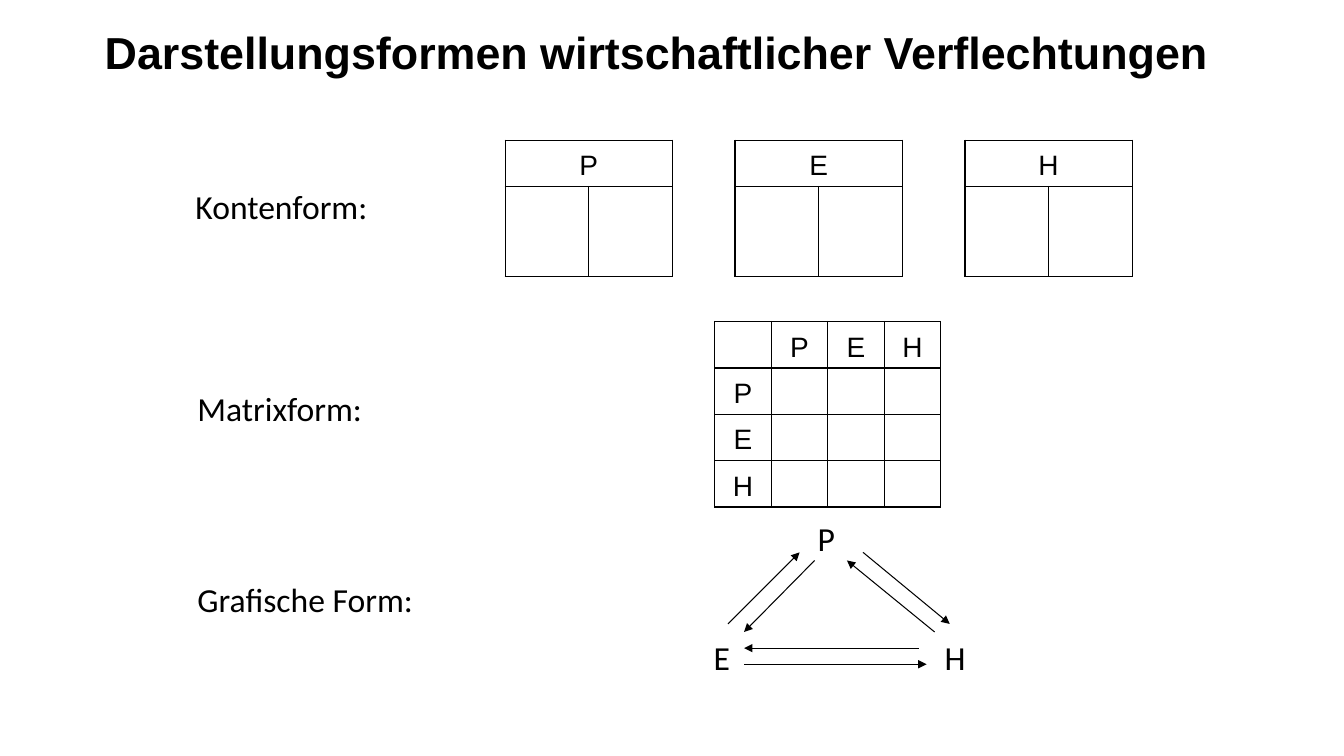
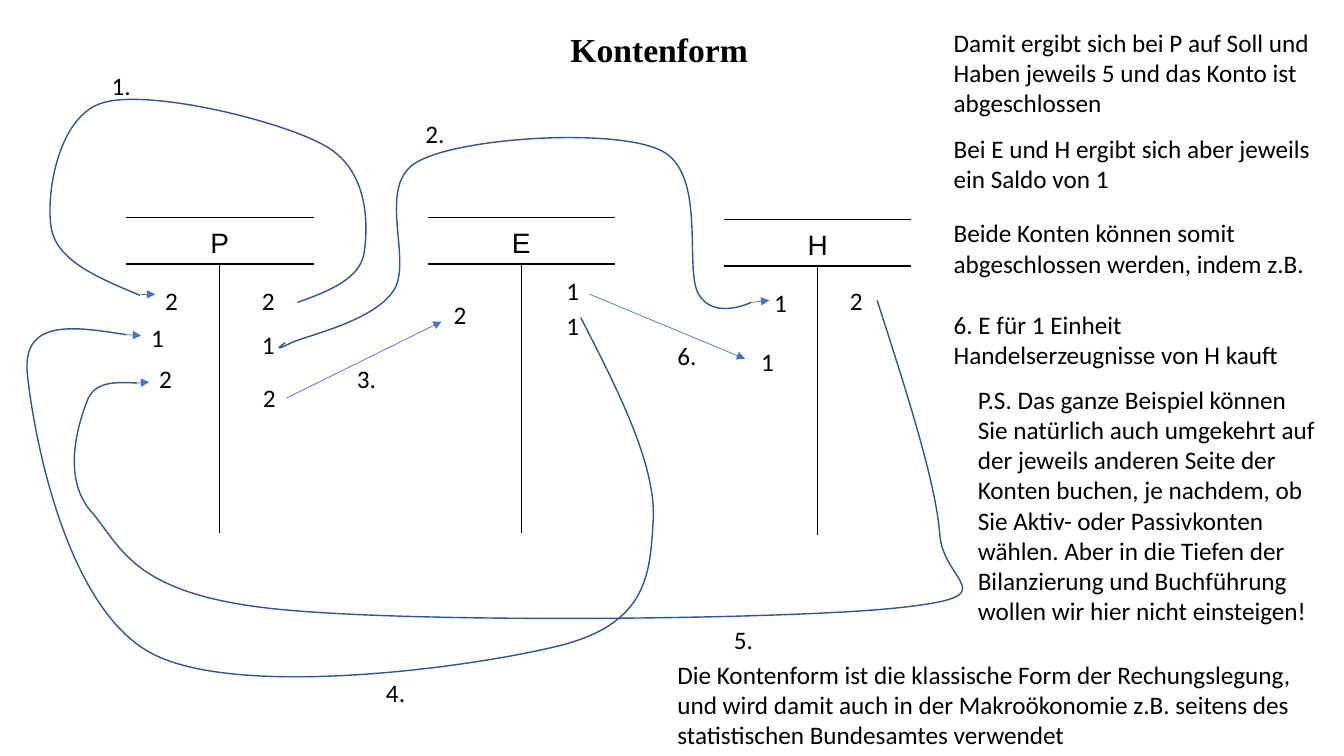
import pptx
import pptx.util
import pptx.dml.color
import pptx.enum.shapes
import pptx.enum.text
import pptx.oxml.ns
from lxml import etree

Inches, Pt = pptx.util.Inches, pptx.util.Pt
qn = pptx.oxml.ns.qn
RGB = pptx.dml.color.RGBColor.from_string
MSO_ANCHOR = pptx.enum.text.MSO_ANCHOR
COLORS = {"ink": "000000", "arrow": "4472C4", "curve": "325491"}
BODY, HEAD, SERIF = "Calibri", "Arial", "Times New Roman"

deck = pptx.Presentation()
deck.slide_width, deck.slide_height = Inches(13.33), Inches(7.5)
forms = deck.slides.add_slide(deck.slide_layouts[6])
books = deck.slides.add_slide(deck.slide_layouts[6])


def write(slide, box, lines, size, wrap=False, font=BODY, title=False):
    """Add a text box; paragraphs after the first stand one line apart."""
    frame = slide.shapes.add_textbox(*map(Inches, box)).text_frame
    frame.text = lines
    frame.word_wrap = wrap
    if not wrap:
        frame.auto_size = pptx.enum.text.MSO_AUTO_SIZE.SHAPE_TO_FIT_TEXT
    if title:
        frame.vertical_anchor = MSO_ANCHOR.MIDDLE
    for i, para in enumerate(frame.paragraphs):
        if i:
            para.space_before = Pt(22)
        for run in para.runs:
            run.font.size, run.font.name, run.font.bold = Pt(size), font, title
            run.font.color.rgb = RGB(COLORS["ink"])


def arrow(slide, ends, color, width):
    link = slide.shapes.add_connector(
        pptx.enum.shapes.MSO_CONNECTOR.STRAIGHT, *map(Inches, ends))
    link.line.color.rgb = RGB(COLORS[color])
    link.line.width = Pt(width)
    props = link._element.spPr
    etree.SubElement(props.find(qn("a:ln")), qn("a:tailEnd"), type="triangle")
    etree.SubElement(props, qn("a:effectLst"))


# Titles
write(forms, (0.94, 0.19, 11.36, 0.64),
      "Darstellungsformen wirtschaftlicher Verflechtungen", 32, True, HEAD, True)
write(books, (5.56, 0.23, 2.19, 0.51), "Kontenform", 24, True, SERIF, True)

# Tables: slide, left, top, column widths, row heights, labels by cell, boxed
tables = []
for i, name in enumerate("PEH"):
    tables.append((forms, 5.01 + 2.28 * i, 1.39, [0.83] * 2, [0.46, 0.89],
                   {(0, 0): name}, True))
for name, x, y in [("P", 1.25, 2.16), ("E", 4.24, 2.16), ("H", 7.18, 2.18)]:
    tables.append((books, x, y, [0.93] * 2, [0.46] + [0.89] * 3,
                   {(0, 0): name}, False))
labels = {}
for i, name in enumerate("PEH", 1):
    labels[0, i] = labels[i, 0] = name
tables.append((forms, 7.09, 3.19, [0.56] * 4, [0.46] * 4, labels, True))

for slide, x, y, cols, rows, labels, boxed in tables:
    table = slide.shapes.add_table(
        len(rows), len(cols), Inches(x), Inches(y),
        Inches(sum(cols)), Inches(sum(rows))).table
    table.first_row = table.horz_banding = False
    for col, width in zip(table.columns, cols):
        col.width = Inches(width)
    for row, height in zip(table.rows, rows):
        row.height = Inches(height)
    if len(cols) == 2:
        table.cell(0, 0).merge(table.cell(0, 1))
    for r in range(len(rows)):
        for c in range(len(cols)):
            cell = table.cell(r, c)
            cell.fill.background()
            cell.vertical_anchor = MSO_ANCHOR.BOTTOM
            if (r, c) in labels:
                cell.text = labels[r, c]
                para = cell.text_frame.paragraphs[0]
                para.alignment = pptx.enum.text.PP_ALIGN.CENTER
                para.line_spacing = Pt(25.6)
                font = para.runs[0].font
                font.size, font.name = Pt(20), HEAD
                font.color.rgb = RGB(COLORS["ink"])
            if boxed:
                sides = "LRTB"
            elif r == 0:
                sides = "TB"
            else:
                sides = "RL"[c] + ("T" if r == 1 else "")
            props = cell._tc.get_or_add_tcPr()
            for i, side in enumerate("LRTB"):
                edge = etree.Element(qn("a:ln" + side), w=str(Pt(1)))
                if side in sides:
                    fill = etree.SubElement(edge, qn("a:solidFill"))
                    etree.SubElement(fill, qn("a:srgbClr"), val=COLORS["ink"])
                else:
                    etree.SubElement(edge, qn("a:noFill"))
                props.insert(i, edge)

# Labels and graph of the three forms
for text, x, y, w in [
        ("Kontenform:", 1.84, 1.8, 1.92), ("Matrixform:", 1.86, 3.8, 1.85),
        ("Grafische Form:", 1.86, 5.69, 2.39), ("P", 8.01, 5.09, 0.39),
        ("E", 6.98, 6.27, 0.37), ("H", 9.27, 6.27, 0.41)]:
    write(forms, (x, y, w, 0.5), text, 24)
for ends in [
        (7.22, 6.19, 7.93, 5.48), (8.08, 5.56, 7.38, 6.27),
        (7.38, 6.59, 9.19, 6.59), (9.11, 6.43, 7.38, 6.43),
        (9.27, 6.27, 8.4, 5.56), (8.56, 5.48, 9.42, 6.19)]:
    arrow(forms, ends, "ink", 0.75)

# Entries and step numbers in the accounts
for text, x, y in [
        ("2", 2.5, 2.78), ("2", 1.54, 2.78), ("1.", 1.01, 0.65),
        ("1", 2.5, 3.22), ("1", 7.58, 2.8), ("2.", 4.12, 1.12),
        ("2", 2.51, 3.74), ("2", 4.4, 2.92), ("3.", 3.44, 3.56),
        ("1", 5.52, 2.68), ("1", 1.4, 3.15), ("4.", 3.73, 6.67),
        ("2", 8.33, 2.78), ("2", 1.48, 3.56), ("5.", 7.18, 6.14),
        ("1", 5.52, 3.03), ("1", 7.45, 3.39), ("6.", 6.62, 3.33)]:
    write(books, (x, y, 0.39 if "." in text else 0.33, 0.4), text, 18)

# Booking curves: a start, then two handles and an end for each bend
curves = [
    [(2.95, 3), (3.26, 2.89), (3.56, 2.77), (3.61, 2.52),
     (3.65, 2.26), (3.67, 1.7), (3.23, 1.45),
     (2.8, 1.2), (1.48, 0.88), (1.02, 1.02),
     (0.57, 1.15), (0.45, 1.95), (0.51, 2.27),
     (0.57, 2.59), (0.98, 2.76), (1.39, 2.93)],
    [(2.83, 3.4), (2.77, 3.44), (2.71, 3.49), (2.89, 3.4),
     (3.07, 3.32), (3.69, 3.19), (3.9, 2.89),
     (4.11, 2.59), (3.71, 1.83), (4.15, 1.6),
     (4.59, 1.36), (6.09, 1.27), (6.55, 1.49),
     (7.02, 1.71), (6.78, 2.67), (6.93, 2.92),
     (7.08, 3.18), (7.45, 3), (7.45, 3)],
    [(5.76, 3.15), (6.13, 3.87), (6.5, 4.6), (6.48, 5.14),
     (6.45, 5.68), (6.43, 6.16), (5.61, 6.39),
     (4.78, 6.61), (2.4, 6.94), (1.52, 6.49),
     (0.63, 6.04), (0.32, 4.22), (0.27, 3.69),
     (0.23, 3.16), (0.74, 3.24), (1.25, 3.32)],
    [(8.7, 2.98), (8.99, 3.88), (9.28, 4.78), (9.32, 5.29),
     (9.35, 5.8), (10.02, 5.91), (8.91, 6.03),
     (7.79, 6.15), (3.96, 6.19), (2.63, 6.03),
     (1.29, 5.87), (1.2, 5.41), (0.9, 5.07),
     (0.61, 4.73), (0.78, 4.2), (0.86, 3.99),
     (0.93, 3.78), (1.14, 3.79), (1.36, 3.8)],
]
for curve in curves:
    dots = [(Inches(x), Inches(y)) for x, y in curve]
    pen = books.shapes.build_freeform(*dots[0])
    pen.add_line_segments(dots[1:], close=False)
    shape = pen.convert_to_shape()
    shape.shadow.inherit = False
    shape.fill.background()
    shape.line.color.rgb = RGB(COLORS["curve"])
    shape.line.width = Pt(1)
    # Turn every three straight segments into one bend
    steps = list(shape._element.iter(qn("a:lnTo")))
    for i in range(0, len(steps), 3):
        bend = etree.Element(qn("a:cubicBezTo"))
        steps[i].addprevious(bend)
        for step in steps[i:i + 3]:
            bend.append(step[0])
            step.getparent().remove(step)

for ends in [
        (1.4, 2.92, 1.54, 2.92), (7.45, 3, 7.63, 2.98),
        (1.25, 3.32, 1.4, 3.33), (1.36, 3.8, 1.48, 3.79),
        (2.84, 3.95, 4.38, 3.19), (5.85, 2.92, 7.39, 3.56)]:
    arrow(books, ends, "arrow", 0.5)

# Remarks
for box, text in [
        ((9.36, 0.22, 3.81, 1.14),
         "Damit ergibt sich bei P auf Soll und Haben jeweils 5 "
         "und das Konto ist abgeschlossen"),
        ((9.36, 1.27, 3.81, 0.75),
         "Bei E und H ergibt sich aber jeweils ein Saldo von 1"),
        ((9.36, 2.11, 3.81, 1.63),
         "Beide Konten können somit abgeschlossen werden, indem z.B.\n"
         "6. E für 1 Einheit Handelserzeugnisse von H kauft"),
        ((9.6, 3.76, 3.56, 2.53),
         "P.S. Das ganze Beispiel können Sie natürlich auch umgekehrt auf "
         "der jeweils anderen Seite der Konten buchen, je nachdem, ob Sie "
         "Aktiv- oder Passivkonten wählen. Aber in die Tiefen der "
         "Bilanzierung und Buchführung wollen wir hier nicht einsteigen!"),
        ((6.62, 6.49, 6.71, 0.94),
         "Die Kontenform ist die klassische Form der Rechungslegung, und "
         "wird damit auch in der Makroökonomie z.B. seitens des "
         "statistischen Bundesamtes verwendet")]:
    write(books, box, text, 18, True)

deck.save("out.pptx")
